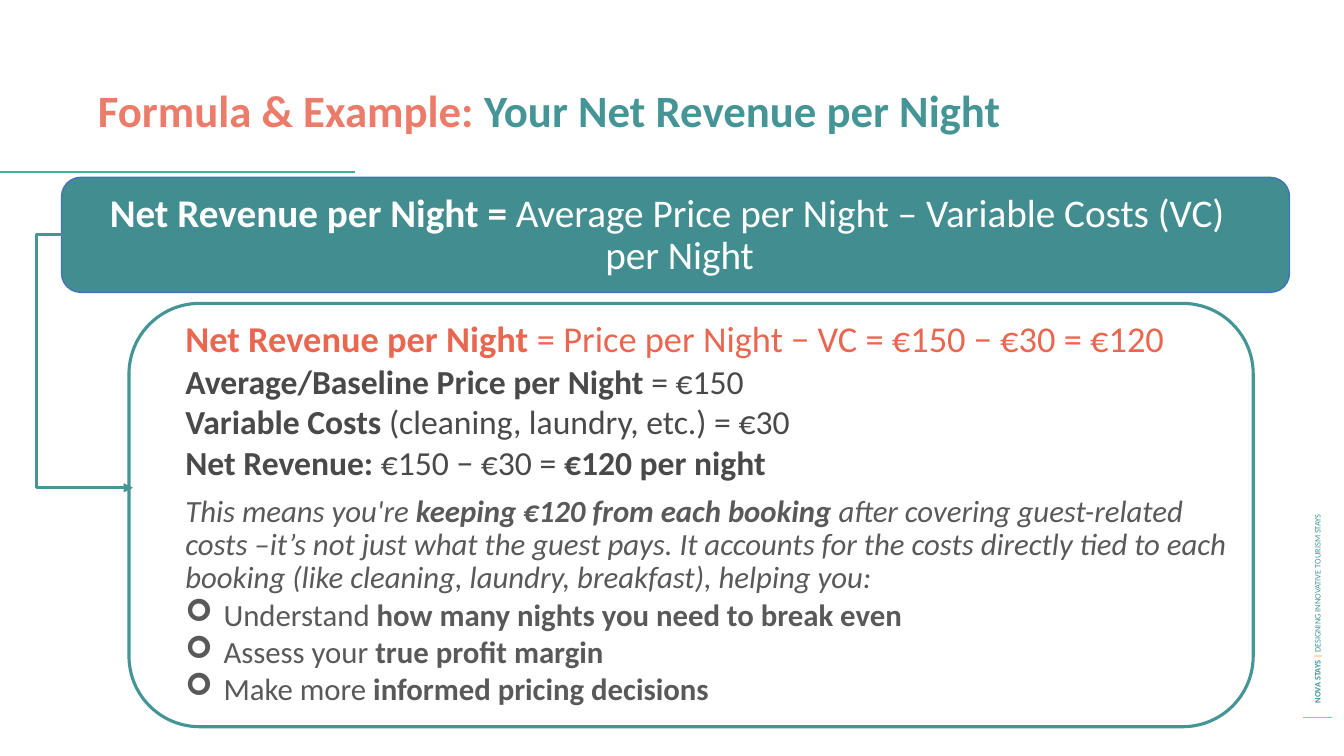
from lxml import etree
from pptx import Presentation
from pptx.dml.color import RGBColor
from pptx.enum.shapes import MSO_CONNECTOR, MSO_SHAPE
from pptx.enum.text import MSO_ANCHOR, MSO_AUTO_SIZE, PP_ALIGN
from pptx.oxml.ns import qn
from pptx.util import Inches, Pt

STRAIGHT, ELBOW = MSO_CONNECTOR.STRAIGHT, MSO_CONNECTOR.ELBOW
ROUNDED = MSO_SHAPE.FLOWCHART_ALTERNATE_PROCESS
TOP, MIDDLE = MSO_ANCHOR.TOP, MSO_ANCHOR.MIDDLE
LEFT, CENTER = PP_ALIGN.LEFT, PP_ALIGN.CENTER
NO_FIT = MSO_AUTO_SIZE.NONE

FONT = "Calibri"
TEAL = RGBColor(0x45, 0x95, 0x97)
DEEP = RGBColor(0x41, 0x8D, 0x8F)
GREEN = RGBColor(0x3F, 0xB5, 0xA1)
BLUE = RGBColor(0x41, 0x74, 0xBA)
CORAL = RGBColor(0xEC, 0x7C, 0x69)
RED = RGBColor(0xE9, 0x67, 0x51)
AMBER = RGBColor(0xFB, 0xA6, 0x3B)
DARK = RGBColor(0x49, 0x49, 0x49)
GREY = RGBColor(0x59, 0x59, 0x59)
WHITE = RGBColor(0xFF, 0xFF, 0xFF)

# Runs are (text, bold, colour); the styles below give the rest.
TITLE = [("Formula & Example: ", True, CORAL),
         ("Your Net Revenue per Night", True, TEAL)]
FORMULA = [("Net Revenue per Night = ", True, WHITE),
           ("Average Price per Night – Variable Costs (VC) per Night", False, WHITE)]
SIDE = [("NOVA STAYS ", True, TEAL), ("| ", True, AMBER),
        ("DESIGNING INNOVATIVE TOURISM STAYS", False, TEAL)]
DETAIL = [
    ("result", [("Net Revenue per Night ", True, RED),
                ("= Price per Night − VC = €150 − €30 = €120", False, RED)]),
    ("input", [("Average/Baseline Price per Night ", True, DARK),
               ("= €150", False, DARK)]),
    ("input", [("Variable Costs ", True, DARK),
               ("(cleaning, laundry, etc.) = €30", False, DARK)]),
    ("input", [("Net Revenue: ", True, DARK), ("€150 − €30 = ", False, DARK),
               ("€120 per night", True, DARK)]),
    ("note", [("This means you're ", False, GREY),
              ("keeping €120 from each booking ", True, GREY),
              ("after covering guest-related costs –it’s not just what the guest "
               "pays. It accounts for the costs directly tied to each booking "
               "(like cleaning, laundry, breakfast), helping you:", False, GREY)]),
    ("bullet", [("Understand ", False, GREY),
                ("how many nights you need to break even", True, GREY)]),
    ("bullet", [("Assess your ", False, GREY), ("true profit margin", True, GREY)]),
    ("bullet", [("Make more ", False, GREY),
                ("informed pricing decisions", True, GREY)]),
]

# Style: size, line spacing, space before, italic, hanging indent, bullet
STYLES = {
    "title": (32, 0.9, 0, False, 0, None),
    "formula": (28, 0.9, 0, False, 0.25, None),
    "side": (6, 1.0, 0, False, 0, None),
    "result": (26, 0.9, 0, False, 0, None),
    "input": (24, 1.0, 0, False, 0, None),
    "note": (22, 0.9, 10, True, 0, None),
    "bullet": (22, 1.0, 0, False, 0.38, "➢"),
}

# Left, top, width, height in percent of the slide
AREAS = {
    "title": (6.53, 11.07, 87.1, 11.73),
    "banner": (4.58, 23.47, 91.37, 15.2),
    "formula": (5.25, 24.93, 88.75, 11.73),
    "card": (9.6, 40.13, 83.65, 56),
    "detail": (13.05, 41.87, 79.74, 11.73),
    "side": (76.37, 54.53, 43.29, 2.67),
}

deck = Presentation()
deck.slide_width, deck.slide_height = Inches(13.33), Inches(7.5)
slide = deck.slides.add_slide(deck.slide_layouts[5])
shapes = slide.shapes


def scale(x, y):
    """Turn percent of the slide into lengths."""
    return int(deck.slide_width * x / 100), int(deck.slide_height * y / 100)


def place(name):
    x, y, w, h = AREAS[name]
    return scale(x, y) + scale(w, h)


def write(frame, rows, align=LEFT, anchor=TOP):
    frame.word_wrap, frame.auto_size = True, NO_FIT
    frame.vertical_anchor = anchor
    for i, (kind, runs) in enumerate(rows):
        size, line, before, slant, hang, mark = STYLES[kind]
        para = frame.add_paragraph() if i else frame.paragraphs[0]
        para.alignment, para.line_spacing = align, line
        para.space_before = Pt(before)
        props = para._p.get_or_add_pPr()
        props.set("marL", str(Inches(hang)))
        props.set("indent", str(-Inches(hang)))
        if mark:
            etree.SubElement(props, qn("a:buFont")).set("typeface", "Wingdings")
            etree.SubElement(props, qn("a:buChar")).set("char", mark)
        for text, bold, color in runs:
            run = para.add_run()
            run.text = text
            font = run.font
            font.name, font.size = FONT, Pt(size)
            font.bold, font.italic = bold, slant
            font.color.rgb = color


def add_text(name, rows, align=LEFT, anchor=TOP):
    box = shapes.add_textbox(*place(name))
    write(box.text_frame, rows, align, anchor)
    return box


def add_panel(name, fill, edge, width):
    panel = shapes.add_shape(ROUNDED, *place(name))
    panel.shadow.inherit = False
    if fill is None:
        panel.fill.background()
    else:
        panel.fill.solid()
        panel.fill.fore_color.rgb = fill
    panel.line.color.rgb, panel.line.width = edge, Pt(width)


def add_line(kind, start, end, color, width):
    line = shapes.add_connector(kind, *scale(*start), *scale(*end))
    line.line.color.rgb, line.line.width = color, Pt(width)
    etree.SubElement(line._element.spPr, qn("a:effectLst"))
    return line


title = shapes.title
title.left, title.top, title.width, title.height = place("title")
write(title.text_frame, [("title", TITLE)])

add_line(STRAIGHT, (96.92, 94.93), (99.1, 94.93), AMBER, 0.75)
add_text("side", [("side", SIDE)], anchor=MIDDLE).rotation = 270

add_panel("banner", DEEP, BLUE, 1)
add_line(STRAIGHT, (0, 22.8), (26.41, 22.8), GREEN, 1.5)
add_text("formula", [("formula", FORMULA)], CENTER)

# The elbow runs out to the left of the banner, then back to the card.
arrow = add_line(ELBOW, (4.58, 31.07), (9.9, 64.53), TEAL, 2.25)
bend = arrow._element.spPr.find(qn("a:prstGeom")).get_or_add_avLst()
guide = etree.SubElement(bend, qn("a:gd"))
guide.set("name", "adj1")
guide.set("fmla", "val -35600")
tip = etree.SubElement(arrow.line._get_or_add_ln(), qn("a:tailEnd"))
tip.set("type", "triangle")

add_text("detail", DETAIL)
add_panel("card", None, TEAL, 2.25)

deck.save("out.pptx")
